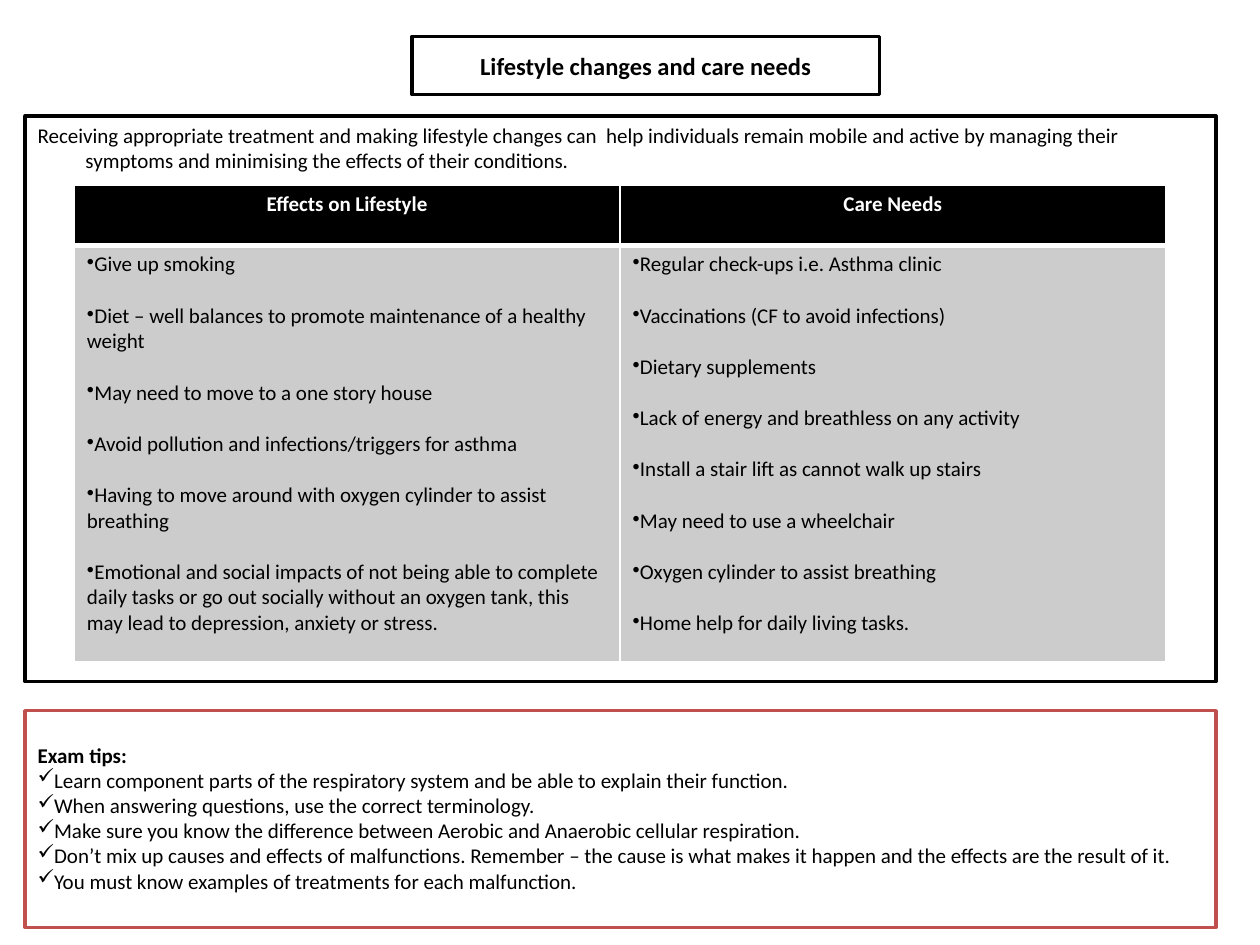
from lxml.etree import SubElement as Sub
from pptx import Presentation
from pptx.dml.color import RGBColor as Rgb
from pptx.enum.shapes import MSO_SHAPE as Kind
from pptx.enum.text import MSO_ANCHOR as Anchor, PP_ALIGN as Align
from pptx.oxml.ns import qn
from pptx.util import Inches, Pt

HUES = {"black": "000000", "white": "FFFFFF", "grey": "CCCCCC", "red": "C0504D"}
FONT = "Calibri"
GAP = 14.65

HEADS = ["Effects on Lifestyle", "Care Needs"]
EFFECTS = [
    "Give up smoking",
    "Diet – well balances to promote maintenance of a healthy weight",
    "May need to move to a one story house",
    "Avoid pollution and infections/triggers for asthma",
    "Having to move around with oxygen cylinder to assist breathing",
    "Emotional and social impacts of not being able to complete daily tasks "
    "or go out socially without an oxygen tank, this may lead to depression, "
    "anxiety or stress.",
]
NEEDS = [
    "Regular check-ups i.e. Asthma clinic",
    "Vaccinations (CF to avoid infections)",
    "Dietary supplements",
    "Lack of energy and breathless on any activity",
    "Install a stair lift as cannot walk up stairs",
    "May need to use a wheelchair",
    "Oxygen cylinder to assist breathing",
    "Home help for daily living tasks.",
]
INTRO = (
    "Receiving appropriate treatment and making lifestyle changes can  help "
    "individuals remain mobile and active by managing their symptoms and "
    "minimising the effects of their conditions."
)
TIPS = [
    "Learn component parts of the respiratory system and be able to explain their function.",
    "When answering questions, use the correct terminology.",
    "Make sure you know the difference between Aerobic and Anaerobic cellular respiration.",
    "Don’t mix up causes and effects of malfunctions. Remember – the cause is "
    "what makes it happen and the effects are the result of it.",
    "You must know examples of treatments for each malfunction.",
]


def color(name):
    return Rgb.from_string(HUES[name])


def write(para, text, size=12, bold=False, hue="black", align=Align.LEFT):
    para.text = text
    para.alignment = align
    font = para.font
    font.name, font.size, font.bold = FONT, Pt(size), bold
    font.color.rgb = color(hue)


def bullet(para, mark):
    props = para._p.get_or_add_pPr()
    props.set("marL", "0")
    props.set("indent", "0")
    Sub(props, qn("a:buChar")).set("char", mark)


def add_list(frame, items, mark, gap=0, start=0):
    for i, item in enumerate(items, start):
        para = frame.add_paragraph() if i else frame.paragraphs[0]
        write(para, item)
        para.space_before = Pt(gap if i else 0)
        bullet(para, mark)


def add_box(slide, left, top, width, height, line="black", anchor=Anchor.TOP):
    box = slide.shapes.add_shape(
        Kind.RECTANGLE, Inches(left), Inches(top), Inches(width), Inches(height))
    box.shadow.inherit = False
    box.fill.solid()
    box.fill.fore_color.rgb = color("white")
    box.line.color.rgb = color(line)
    box.line.width = Pt(2)
    frame = box.text_frame
    frame.word_wrap = True
    frame.vertical_anchor = anchor
    return frame


def style_cell(cell, fill, top=1, bottom=1):
    props = cell._tc.get_or_add_tcPr()
    for side, width in zip("LRTB", (1, 1, top, bottom)):
        line = Sub(props, qn("a:ln" + side), w=str(Pt(width)))
        solid = Sub(line, qn("a:solidFill"))
        Sub(solid, qn("a:srgbClr"), val=HUES["white"])
    cell.fill.solid()
    cell.fill.fore_color.rgb = color(fill)


def add_grid(slide):
    grid = slide.shapes.add_table(
        2, 2, Inches(0.59), Inches(1.47), Inches(8.66), Inches(3.78)).table
    grid.rows[0].height, grid.rows[1].height = Inches(0.48), Inches(3.3)
    for col, (head, items) in enumerate(zip(HEADS, (EFFECTS, NEEDS))):
        top, body = grid.cell(0, col), grid.cell(1, col)
        style_cell(top, "black", bottom=3)
        write(top.text_frame.paragraphs[0], head, bold=True, hue="white",
              align=Align.CENTER)
        style_cell(body, "grey", top=3)
        add_list(body.text_frame, items, "•", GAP)


def main():
    deck = Presentation()
    deck.slide_width, deck.slide_height = Inches(10), Inches(7.5)
    slide = deck.slides.add_slide(deck.slide_layouts[6])

    title = add_box(slide, 3.27, 0.29, 3.71, 0.46, anchor=Anchor.MIDDLE)
    write(title.paragraphs[0], "Lifestyle changes and care needs", 14, True,
          align=Align.CENTER)

    intro = add_box(slide, 0.2, 0.92, 9.45, 4.49).paragraphs[0]
    write(intro, INTRO)
    props = intro._p.get_or_add_pPr()
    props.set("marL", str(Inches(0.38)))
    props.set("indent", str(Inches(-0.38)))

    add_grid(slide)

    tips = add_box(slide, 0.2, 5.64, 9.45, 1.72, "red")
    tips.margin_top = Inches(0.25)
    write(tips.paragraphs[0], "Exam tips:", bold=True)
    add_list(tips, TIPS, "✓", start=1)

    deck.save("out.pptx")


if __name__ == "__main__":
    main()
